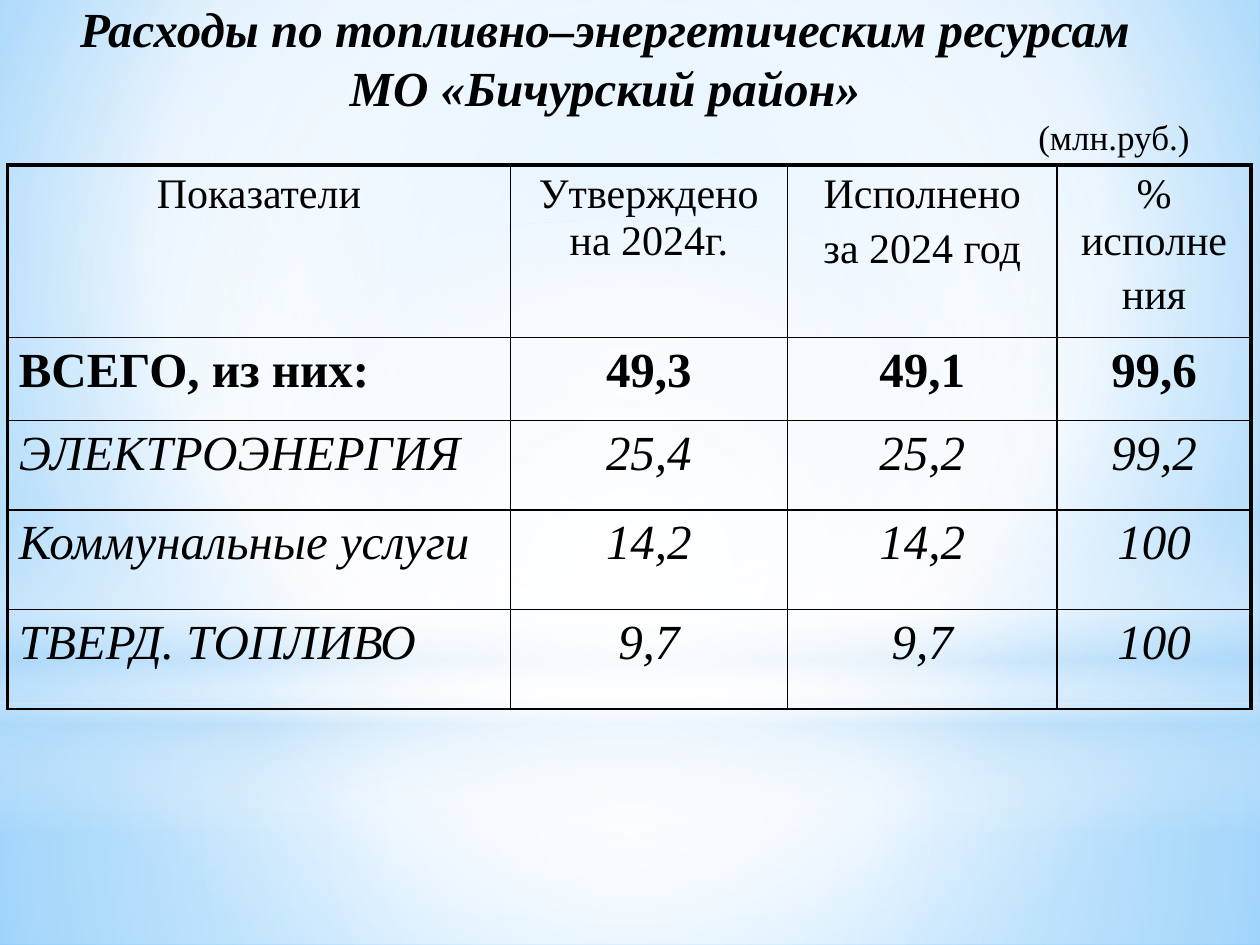
from lxml.etree import SubElement
from pptx import Presentation
from pptx.dml.color import RGBColor
from pptx.enum.shapes import MSO_SHAPE
from pptx.enum.text import MSO_ANCHOR, PP_ALIGN
from pptx.oxml.ns import qn
from pptx.util import Inches, Pt

FONT = "Times New Roman"
COLORS = {"ink": "000000", "white": "FFFFFF", "pale": "B4DCFA",
          "sky": "9ED5FF", "blue": "5BB9FF"}
COLS = [3.99, 2.2, 2.14, 1.54]
ROWS = [1.18, 0.66, 0.71, 0.79, 0.79]
HEAD = [["Показатели"], ["Утверждено на 2024г."],
        ["Исполнено", "за 2024 год"], ["% исполне", "ния"]]
BODY = [
    ["ВСЕГО, из них:", "49,3", "49,1", "99,6"],
    ["ЭЛЕКТРОЭНЕРГИЯ", "25,4", "25,2", "99,2"],
    ["Коммунальные услуги", "14,2", "14,2", "100"],
    ["ТВЕРД. ТОПЛИВО", "9,7", "9,7", "100"],
]
MID = (50, 50, 50, 50)


def add(node, tag, **attrs):
    return SubElement(node, qn(tag), {k: str(v) for k, v in attrs.items()})


def shade(fill, root, stops, focus=None):
    """Fill with a gradient of (place, colour, opacity): round a focus, or downward."""
    fill.solid()
    fill.fore_color.rgb = RGBColor.from_string(COLORS["white"])
    old = root.find(".//" + qn("a:solidFill"))
    grad = add(old.getparent(), "a:gradFill", rotWithShape=1)
    old.getparent().replace(old, grad)
    marks = add(grad, "a:gsLst")
    for place, name, alpha in stops:
        mark = add(marks, "a:gs", pos=place * 1000)
        color = add(mark, "a:srgbClr", val=COLORS[name])
        if alpha < 100:
            add(color, "a:alpha", val=alpha * 1000)
    if focus:
        way = add(grad, "a:path", path="circle")
        add(way, "a:fillToRect", **{k: v * 1000 for k, v in zip("ltrb", focus)})
    else:
        add(grad, "a:lin", ang=90 * 60000, scaled=0)


def draw_back(slide, width):
    shade(slide.background.fill, slide.element,
          [(0, "sky", 100), (60, "white", 100), (100, "blue", 100)],
          (20, 10, 20, 60))
    glows = [
        (MSO_SHAPE.RECTANGLE, 5.58, 1.92, MID,
         [(0, "white", 91), (37, "white", 76), (100, "pale", 79)]),
        (MSO_SHAPE.RECTANGLE, 0, 5.58, MID,
         [(0, "white", 89), (48, "white", 62), (100, "pale", 79)]),
        (MSO_SHAPE.RECTANGLE, 4.12, 2.5, None,
         [(0, "white", 0), (29, "white", 30), (45, "pale", 40),
          (55, "white", 26), (65, "pale", 60), (100, "white", 0)]),
        (MSO_SHAPE.OVAL, 1.75, 5.58, MID,
         [(0, "white", 100), (56, "white", 0)]),
    ]
    for kind, top, height, focus, stops in glows:
        glow = slide.shapes.add_shape(kind, 0, Inches(top), width, Inches(height))
        glow.shadow.inherit = False
        glow.line.fill.background()
        shade(glow.fill, glow.element, stops, focus)


def write(frame, lines, size, align, bold=False, italic=False, gap=0, start=0):
    """Write one paragraph a line, from paragraph number start on."""
    for i, text in enumerate(lines, start):
        para = frame.add_paragraph() if i else frame.paragraphs[0]
        para.alignment = align
        para.space_before = Pt(gap)
        run = para.add_run()
        run.text = text
        font = run.font
        font.name, font.size = FONT, Pt(size)
        font.bold, font.italic = bold, italic
        font.color.rgb = RGBColor.from_string(COLORS["ink"])


def draw_title(slide, left, top, width, height):
    frame = slide.shapes.add_textbox(left, top, width, height).text_frame
    frame.word_wrap = True
    frame.vertical_anchor = MSO_ANCHOR.MIDDLE
    write(frame, ["Расходы по топливно–энергетическим ресурсам",
                  "МО «Бичурский район»"], 28, PP_ALIGN.CENTER, True, True)
    write(frame, ["(млн.руб.)"], 20, PP_ALIGN.RIGHT, start=2)
    first = frame.paragraphs[0]._p.get_or_add_pPr()
    first.set("marR", str(Inches(0.4)))


def edge(cell, widths):
    """Draw the left, right, top and bottom borders, then clear the fill."""
    props = cell._tc.get_or_add_tcPr()
    for side, width in zip("LRTB", widths):
        line = add(props, f"a:ln{side}", w=Pt(width))
        add(add(line, "a:solidFill"), "a:srgbClr", val=COLORS["ink"])
    cell.fill.background()


def draw_table(slide, left, top, width, height):
    grid = slide.shapes.add_table(len(ROWS), len(COLS), left, top, width, height).table
    grid.first_row = grid.horz_banding = False
    for col, size in zip(grid.columns, COLS):
        col.width = Inches(size)
    for row, size in zip(grid.rows, ROWS):
        row.height = Inches(size)
    lines = [HEAD] + [[[text] for text in row] for row in BODY]
    last = len(COLS) - 1
    for r, row in enumerate(lines):
        size = 28 if r else 24
        for c, texts in enumerate(row):
            cell = grid.cell(r, c)
            cell.margin_left = cell.margin_right = Inches(0.09)
            cell.margin_top = cell.margin_bottom = Inches(0.05)
            align = PP_ALIGN.LEFT if r and c == 0 else PP_ALIGN.CENTER
            write(cell.text_frame, texts, size, align, r == 1, r > 1, size * 0.2)
            edge(cell, [2.25 if c == 0 else 1, 2.25 if c == last else 1,
                        2.25 if r == 0 else 1, 1])


def main():
    deck = Presentation()
    deck.slide_width, deck.slide_height = Inches(10), Inches(7.5)
    slide = deck.slides.add_slide(deck.slide_layouts[6])
    draw_back(slide, deck.slide_width)
    left, width = Inches(0.06), Inches(9.88)
    draw_title(slide, left, Inches(-0.07), width, Inches(1.38))
    draw_table(slide, left, Inches(1.31), width, Inches(sum(ROWS)))
    deck.save("out.pptx")


if __name__ == "__main__":
    main()
